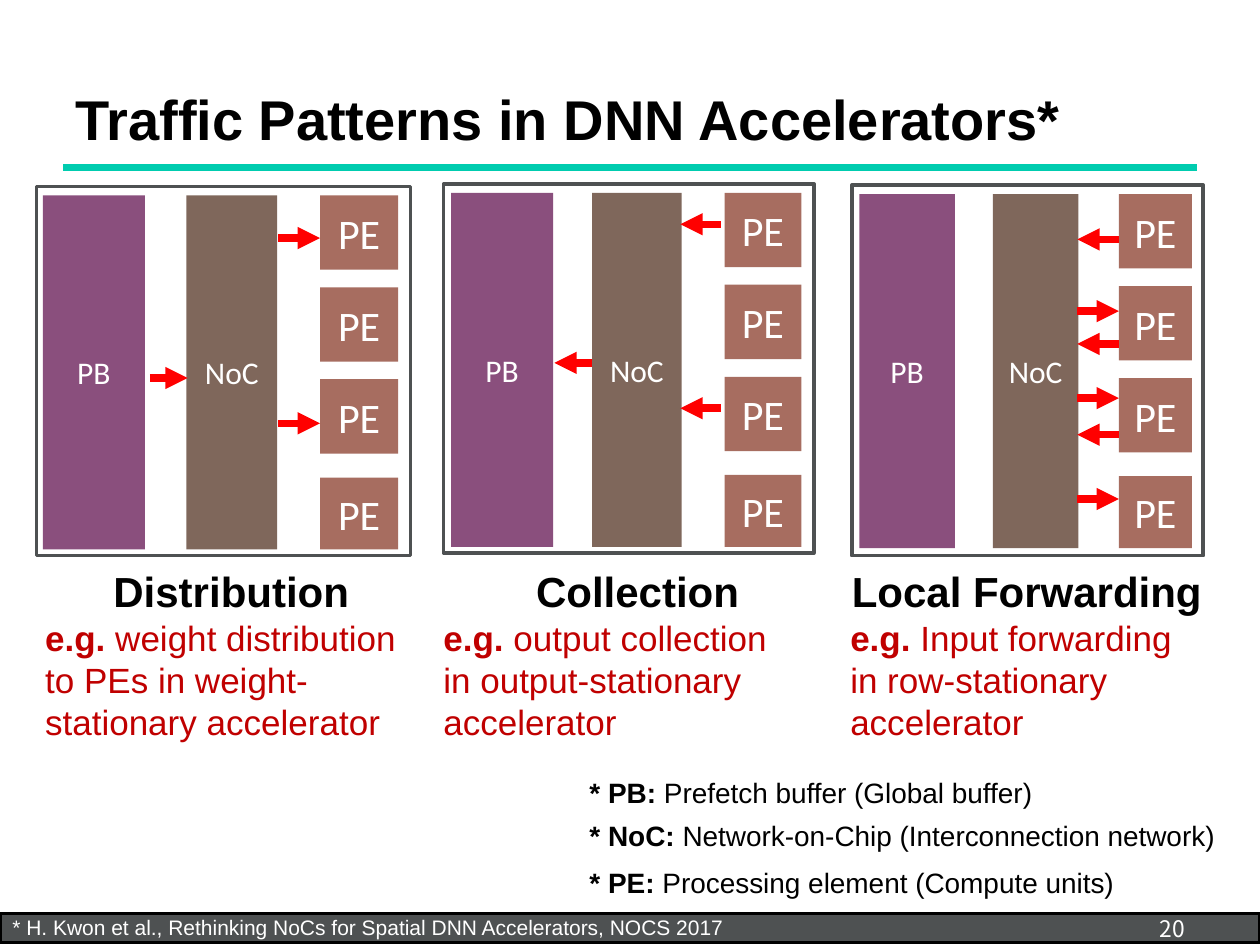
from lxml import etree
from pptx import Presentation, util as u
from pptx.dml.color import RGBColor
from pptx.enum import shapes, text
from pptx.oxml.ns import qn

In = u.Inches
BLACK = RGBColor(0x00, 0x00, 0x00)
WHITE = RGBColor(0xFF, 0xFF, 0xFF)
GREY = RGBColor(0x4E, 0x51, 0x52)
TEAL = RGBColor(0x00, 0xCC, 0xAF)
PURPLE = RGBColor(0x8A, 0x4F, 0x7D)
BROWN = RGBColor(0x7F, 0x67, 0x5B)
ROSE = RGBColor(0xA7, 0x6D, 0x60)
RED = RGBColor(0xFF, 0x00, 0x00)
DARK_RED = RGBColor(0xC0, 0x00, 0x00)
LEFT, CENTER, RIGHT = (text.PP_ALIGN.LEFT, text.PP_ALIGN.CENTER,
                       text.PP_ALIGN.RIGHT)
TOP, MIDDLE, BOTTOM = (text.MSO_ANCHOR.TOP, text.MSO_ANCHOR.MIDDLE,
                       text.MSO_ANCHOR.BOTTOM)


class Deck:
    """Holds the style and the current slide."""
    font, block_font = "Arial", "Calibri"

    def __init__(self, slide):
        self.s = slide

    def style(self, p, size, color, font, bold=None, align=LEFT):
        p.alignment = align
        p.font.size, p.font.name = u.Pt(size), font
        p.font.color.rgb = color
        p.font.bold = bold

    def rect(self, x, y, w, h, fill=None, line=None):
        sp = self.s.shapes.add_shape(shapes.MSO_SHAPE.RECTANGLE,
                                     In(x), In(y), In(w), In(h))
        sp.shadow.inherit = False
        if fill is None:
            sp.fill.background()
        else:
            sp.fill.solid()
            sp.fill.fore_color.rgb = fill
        if line is None:
            sp.line.fill.background()
        else:
            sp.line.color.rgb = line
            sp.line.width = u.Pt(2)
        return sp

    def block(self, x, y, w, h, label, size, fill):
        tf = self.rect(x, y, w, h, fill).text_frame
        tf.margin_left = tf.margin_right = 0
        tf.vertical_anchor = MIDDLE
        p = tf.paragraphs[0]
        p.text = label
        self.style(p, size, WHITE, self.block_font, align=CENTER)

    def line(self, x1, y1, x2, y2, color, width, arrow=False):
        c = self.s.shapes.add_connector(shapes.MSO_CONNECTOR.STRAIGHT,
                                        In(x1), In(y1), In(x2), In(y2))
        c.line.color.rgb = color
        c.line.width = u.Pt(width)
        if arrow:
            ln = c.line._get_or_add_ln()
            etree.SubElement(ln, qn("a:tailEnd"), type="triangle")
        etree.SubElement(c._element.spPr, qn("a:effectLst"))

    def text(self, x, y, w, h, words, size, color=BLACK, lead="", bold=None,
             align=LEFT, anchor=TOP, font=font):
        """Add a text box; lead is a bold opening run."""
        tf = self.s.shapes.add_textbox(In(x), In(y), In(w), In(h)).text_frame
        tf.word_wrap = True
        tf.vertical_anchor = anchor
        p = tf.paragraphs[0]
        if lead:
            r = p.add_run()
            r.text = lead
            r.font.bold = True
        p.add_run().text = words
        self.style(p, size, color, font, bold, align)

    def panel(self, frame, pb, noc, pe):
        """Draw one accelerator; pb, noc and pe are (left, width) pairs."""
        x, y, w, h = frame
        top = y + 0.07
        self.block(pb[0], top, pb[1], 2.81, "PB", 18, PURPLE)
        self.block(noc[0], top, noc[1], 2.81, "NoC", 18, BROWN)
        for dy, height in ((0, 0.59), (0.73, 0.59), (1.46, 0.59), (2.24, 0.57)):
            self.block(pe[0], top + dy, pe[1], height, "PE", 24, ROSE)
        self.rect(x, y, w, h, line=GREY)


def main():
    prs = Presentation()
    prs.slide_width, prs.slide_height = In(10), In(7.5)
    d = Deck(prs.slides.add_slide(prs.slide_layouts[6]))

    # Footer bar, title and rule
    d.rect(0, 7.25, 10, 0.23, GREY, BLACK)
    d.line(0.5, 1.33, 9.5, 1.33, TEAL, 4)
    d.text(0.5, 0.5, 9, 0.75, "Traffic Patterns in DNN Accelerators*", 32,
           bold=True, anchor=BOTTOM)
    d.text(8.08, 7.25, 1.42, 0.23, "20", 13, WHITE, align=RIGHT,
           anchor=MIDDLE, font="Noto Sans CJK KR")

    # Accelerator panels
    d.panel((0.29, 1.48, 2.97, 2.93), (0.34, 0.81), (1.48, 0.72), (2.54, 0.62))
    d.panel((3.52, 1.46, 2.94, 2.93), (3.58, 0.81), (4.7, 0.71), (5.75, 0.61))
    d.panel((6.76, 1.47, 2.79, 2.94), (6.82, 0.76), (7.88, 0.68), (8.88, 0.58))

    # Traffic arrows: start x, end x, y
    to_pe, from_pe = (8.55, 8.88), (8.88, 8.55)
    arrows = [
        (1.19, 1.49, 3), (2.21, 2.54, 1.89), (2.21, 2.54, 3.36),
        (4.7, 4.4, 2.88), (5.72, 5.4, 1.78), (5.72, 5.4, 3.24),
        (*from_pe, 1.9), (*to_pe, 2.47), (*from_pe, 2.73),
        (*to_pe, 3.16), (*from_pe, 3.45), (*to_pe, 3.96),
    ]
    for x1, x2, y in arrows:
        d.line(x1, y, x2, y, RED, 4.25, arrow=True)

    # Pattern names and examples
    patterns = [
        ("Distribution", 0.66, 2.35, 0.26, 3.24,
         "weight distribution to PEs in weight-stationary accelerator"),
        ("Collection", 3.99, 2.14, 3.42, 3.02,
         "output collection in output-stationary accelerator"),
        ("Local Forwarding", 6.53, 3.24, 6.65, 2.9,
         "Input forwarding in row-stationary accelerator"),
    ]
    for name, name_x, name_w, x, w, example in patterns:
        d.text(name_x, 4.44, name_w, 0.47, name, 24, bold=True, align=CENTER)
        d.text(x, 4.84, w, 1.13, example, 20, DARK_RED, lead="e.g. ")

    # Abbreviations and reference
    for y, term, meaning in (
            (6.11, "PB", "Prefetch buffer (Global buffer)"),
            (6.45, "NoC", "Network-on-Chip (Interconnection network)"),
            (6.82, "PE", "Processing element (Compute units)")):
        d.text(4.58, y, 5.22, 0.37, meaning, 16, lead=f"* {term}: ")
    d.text(0, 7.21, 6.3, 0.3, "* H. Kwon et al., Rethinking NoCs for Spatial "
           "DNN Accelerators, NOCS 2017", 12, WHITE)

    prs.save("out.pptx")


if __name__ == "__main__":
    main()
